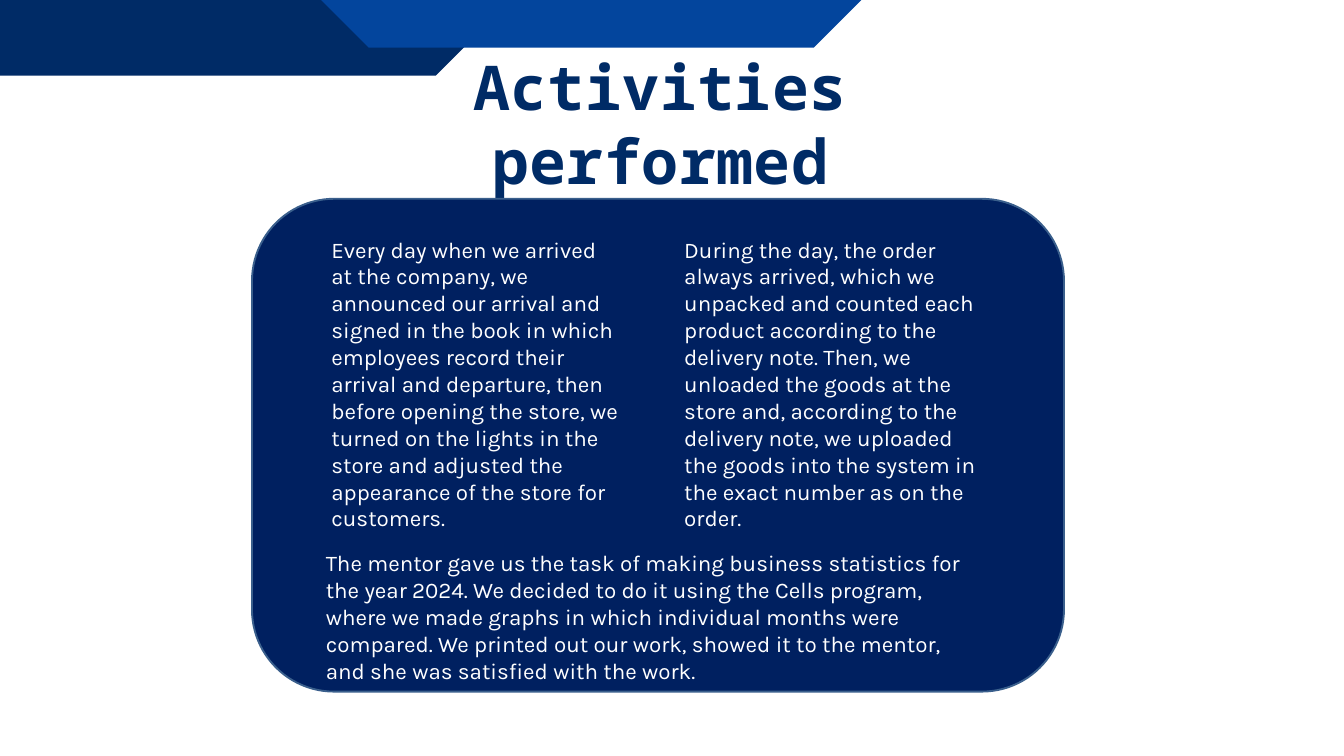
from dataclasses import dataclass

from pptx import Presentation
from pptx.dml.color import RGBColor
from pptx.enum.shapes import MSO_SHAPE
from pptx.enum.text import MSO_ANCHOR, PP_ALIGN
from pptx.util import Pt

ROUNDED = MSO_SHAPE.ROUNDED_RECTANGLE
TOP, CENTER, LEFT = MSO_ANCHOR.TOP, PP_ALIGN.CENTER, PP_ALIGN.LEFT
TITLE_ONLY = 5


@dataclass(frozen=True)
class Theme:
    navy: str = "002B66"
    blue: str = "03459D"
    panel: str = "002060"
    outline: str = "3A5F8C"
    white: str = "FFFFFF"
    title_font: str = "Noto Sans Mono"
    body_font: str = "Karla"
    title_size: int = 66
    body_size: int = 24


class SlideBuilder:
    def __init__(self, slide, theme):
        self.slide = slide
        self.theme = theme

    def _format(self, paragraph, font_name, size, color, bold=False):
        for run in paragraph.runs:
            run.font.name = font_name
            run.font.size = Pt(size)
            run.font.bold = bold
            run.font.color.rgb = RGBColor.from_string(color)

    def _paint(self, shape, fill):
        shape.shadow.inherit = False
        shape.fill.solid()
        shape.fill.fore_color.rgb = RGBColor.from_string(fill)

    def band(self, points, fill):
        outline = self.slide.shapes.build_freeform(*map(Pt, points[0]))
        outline.add_line_segments([(Pt(x), Pt(y)) for x, y in points[1:]])
        band = outline.convert_to_shape()
        self._paint(band, fill)
        band.line.fill.background()

    def panel(self, left, top, width, height):
        panel = self.slide.shapes.add_shape(
            ROUNDED, Pt(left), Pt(top), Pt(width), Pt(height))
        self._paint(panel, self.theme.panel)
        panel.line.color.rgb = RGBColor.from_string(self.theme.outline)
        panel.line.width = Pt(2)

    def title(self, text, left, top, width, height):
        heading = self.slide.shapes.title
        heading.left, heading.top = Pt(left), Pt(top)
        heading.width, heading.height = Pt(width), Pt(height)
        frame = heading.text_frame
        frame.text = text
        frame.word_wrap = True
        frame.vertical_anchor = TOP
        frame.margin_left = frame.margin_right = frame.margin_bottom = 0
        frame.margin_top = Pt(1)
        paragraph = frame.paragraphs[0]
        paragraph.alignment = CENTER
        paragraph.space_before = Pt(1)
        self._format(paragraph, self.theme.title_font, self.theme.title_size,
                     self.theme.navy, bold=True)
        # Letter spacing is in hundredths of a point.
        paragraph.runs[0].font._element.set("spc", "50")

    def body(self, text, left, top, width, height):
        box = self.slide.shapes.add_textbox(
            Pt(left), Pt(top), Pt(width), Pt(height))
        frame = box.text_frame
        frame.text = text
        frame.word_wrap = True
        paragraph = frame.paragraphs[0]
        paragraph.alignment = LEFT
        self._format(paragraph, self.theme.body_font, self.theme.body_size,
                     self.theme.white)


def main():
    presentation = Presentation()
    presentation.slide_width, presentation.slide_height = Pt(1440), Pt(810)
    slide = presentation.slides.add_slide(
        presentation.slide_layouts[TITLE_ONLY])
    theme = Theme()
    builder = SlideBuilder(slide, theme)

    builder.band([(0, 0), (541.5, 0), (541.5, 6.5), (467, 81), (0, 81)],
                 theme.navy)
    builder.band([(344, 0), (923, 0), (872, 51), (395, 51)], theme.blue)
    builder.title("Activities performed", 444, 51, 527, 161)
    # The panel covers the descenders of the title.
    builder.panel(270, 213, 870, 528)

    builder.body(
        "The mentor gave us the task of making business statistics for the "
        "year 2024. We decided to do it using the Cells program, where we "
        "made graphs in which individual months were compared. We printed "
        "out our work, showed it to the mentor, and she was satisfied with "
        "the work.", 342, 585, 720, 153)
    builder.body(
        "During the day, the order always arrived, which we unpacked and "
        "counted each product according to the delivery note. Then, we "
        "unloaded the goods at the store and, according to the delivery "
        "note, we uploaded the goods into the system in the exact number as "
        "on the order.", 726, 249, 342, 327)
    builder.body(
        "Every day when we arrived at the company, we announced our arrival "
        "and signed in the book in which employees record their arrival and "
        "departure, then before opening the store, we turned on the lights "
        "in the store and adjusted the appearance of the store for "
        "customers.", 348, 249, 324, 327)

    # The title is the first shape; the bands belong behind it.
    heading = slide.shapes.title._element
    tree = slide.shapes._spTree
    tree.remove(heading)
    tree.insert(4, heading)

    presentation.save("out.pptx")


if __name__ == "__main__":
    main()
